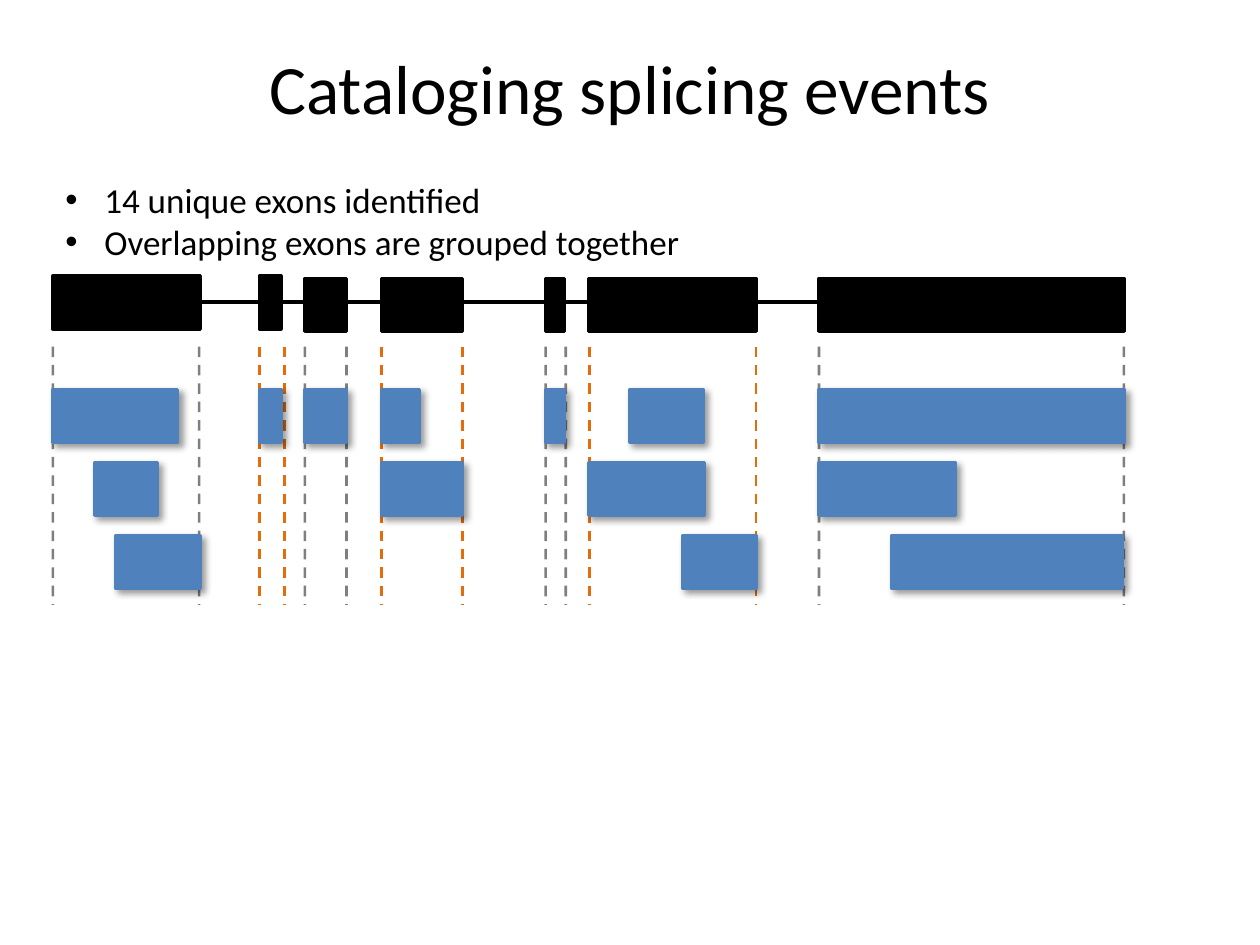
"""Build a slide that catalogs splicing events as grouped exons along a gene."""
from dataclasses import dataclass

from lxml import etree
from pptx import Presentation
from pptx import util as u
from pptx.dml.color import RGBColor
from pptx.enum import dml, shapes, text
from pptx.oxml import parse_xml
from pptx.oxml.ns import nsdecls, qn

PX = u.Inches(1) // 100
BLACK = RGBColor(0x00, 0x00, 0x00)
BLUE = RGBColor(0x4F, 0x81, 0xBD)
ORANGE = RGBColor(0xE4, 0x6C, 0x0A)
FONT = "Calibri"
EXON_HEIGHT = 42
GUIDE_TOP, GUIDE_BOTTOM = 275, 480
GENE_Y = 240
TRACK_TOP, TRACK_STEP = 309, 58
SHADOW = (
    f'<a:outerShdw {nsdecls("a")} blurRad="50800" dist="38100" dir="2700000"'
    ' rotWithShape="0"><a:srgbClr val="000000"><a:alpha val="40000"/>'
    "</a:srgbClr></a:outerShdw>"
)


@dataclass(frozen=True)
class Exon:
    left: int
    top: int
    width: int
    color: RGBColor


@dataclass(frozen=True)
class Line:
    start: tuple[int, int]
    end: tuple[int, int]
    color: RGBColor
    points: float
    dashed: bool = False


@dataclass(frozen=True)
class Group:
    left: int
    right: int
    color: RGBColor


GROUPS = [
    Group(42, 158, BLACK),
    Group(206, 226, ORANGE),
    Group(242, 275, BLACK),
    Group(303, 367, ORANGE),
    Group(433, 449, BLACK),
    Group(468, 600, ORANGE),
    Group(650, 892, BLACK),
]
TRACKS = [
    [(42, 99), (206, 17), (242, 33), (303, 30), (433, 15), (500, 58), (650, 242)],
    [(75, 50), (303, 64), (467, 92), (650, 108)],
    [(92, 67), (542, 58), (708, 183)],
]
GENE_EXONS = [
    Exon(42, 219, 117, BLACK),
    Exon(206, 219, 17, BLACK),
    Exon(242, 221, 33, BLACK),
    Exon(303, 221, 64, BLACK),
    Exon(433, 221, 15, BLACK),
    Exon(467, 221, 133, BLACK),
    Exon(650, 221, 242, BLACK),
]
BULLETS = ["14 unique exons identified", "Overlapping exons are grouped together"]


def draw_exon(page, exon: Exon, shadow: bool = False) -> None:
    box = page.shapes.add_shape(
        shapes.MSO_SHAPE.RECTANGLE,
        exon.left * PX, exon.top * PX, exon.width * PX, EXON_HEIGHT * PX,
    )
    box.fill.solid()
    box.fill.fore_color.rgb = exon.color
    box.line.color.rgb = exon.color
    box.line.width = u.Pt(2)
    box.shadow.inherit = False
    if shadow:
        box._element.spPr.find(qn("a:effectLst")).append(parse_xml(SHADOW))


def draw_line(page, line: Line) -> None:
    points = [value * PX for value in (*line.start, *line.end)]
    connector = page.shapes.add_connector(shapes.MSO_CONNECTOR.STRAIGHT, *points)
    connector.line.color.rgb = line.color
    connector.line.width = u.Pt(line.points)
    properties = connector._element.spPr
    if line.dashed:
        connector.line.dash_style = dml.MSO_LINE.DASH
        if line.color == BLACK:
            color = next(properties.iter(qn("a:srgbClr")))
            etree.SubElement(color, qn("a:alpha"), val="50000")
    etree.SubElement(properties, qn("a:effectLst"))


def draw_text(page, bounds: tuple[int, int, int, int], lines: list[str],
              size: float, bulleted: bool = False) -> None:
    box = page.shapes.add_textbox(*(value * PX for value in bounds))
    frame = box.text_frame
    frame.word_wrap = True
    frame.text = "\n".join(lines)
    if not bulleted:
        frame.vertical_anchor = text.MSO_ANCHOR.MIDDLE
    for para in frame.paragraphs:
        para.font.name = FONT
        para.font.size = u.Pt(size)
        para.font.color.rgb = BLACK
        if bulleted:
            properties = para._p.get_or_add_pPr()
            properties.set("marL", str(31 * PX))
            properties.set("indent", str(-31 * PX))
            bullet_font = etree.Element(qn("a:buFont"), typeface="Arial")
            bullet = etree.Element(qn("a:buChar"), char="•")
            properties.insert(0, bullet_font)
            bullet_font.addnext(bullet)
        else:
            para.alignment = text.PP_ALIGN.CENTER


def main() -> None:
    deck = Presentation()
    deck.slide_width, deck.slide_height = 1000 * PX, 750 * PX
    page = deck.slides.add_slide(deck.slide_layouts[6])

    for group in GROUPS:
        for x in (group.left, group.right):
            draw_line(page, Line((x, GUIDE_TOP), (x, GUIDE_BOTTOM), group.color, 1.5, True))
    draw_text(page, (50, 30, 900, 78), ["Cataloging splicing events"], 39.6)
    for row, track in enumerate(TRACKS):
        for left, width in track:
            exon = Exon(left, TRACK_TOP + row * TRACK_STEP, width, BLUE)
            draw_exon(page, exon, shadow=True)
    for start, end in ((108, 717), (242, 583)):
        draw_line(page, Line((start, GENE_Y), (end, GENE_Y), BLACK, 2.25))
    for exon in GENE_EXONS:
        draw_exon(page, exon)
    draw_text(page, (42, 137, 692, 77), BULLETS, 20, bulleted=True)

    deck.save("out.pptx")


if __name__ == "__main__":
    main()
